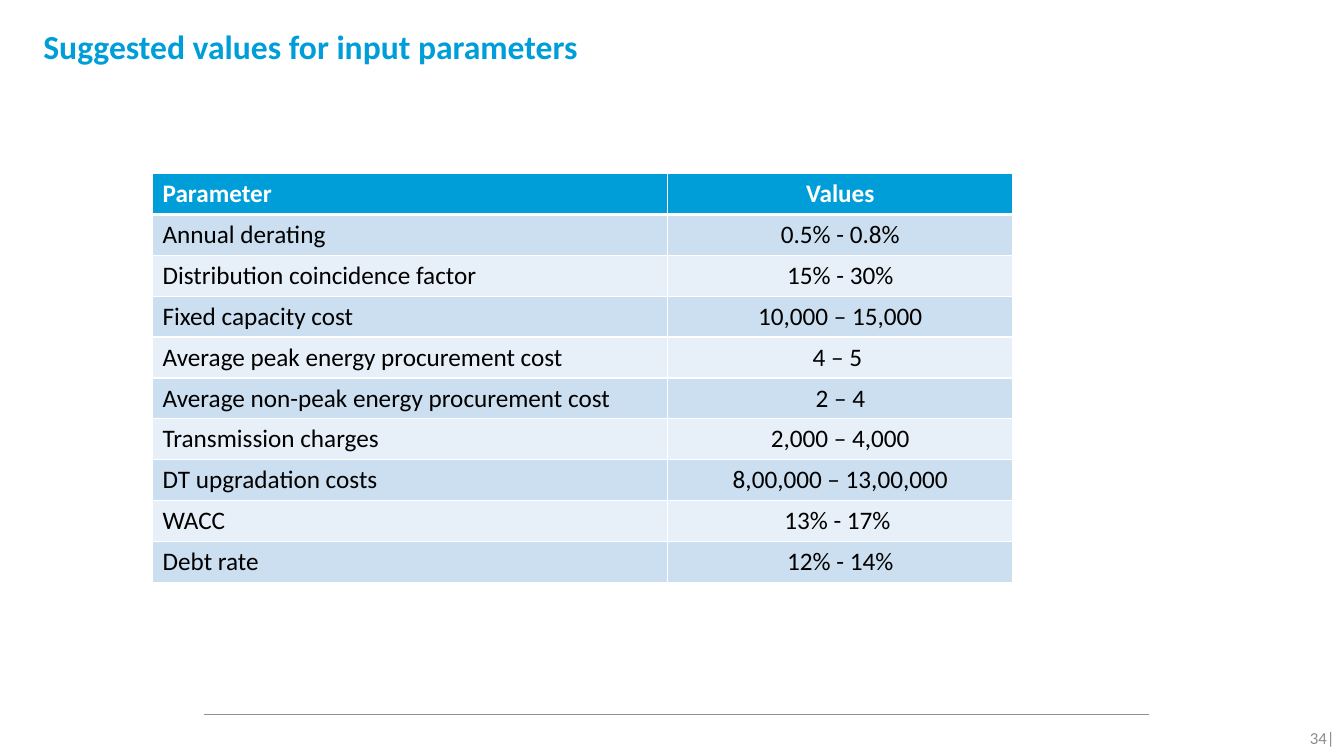
from lxml import etree
from pptx import Presentation
from pptx import util as u
from pptx.dml import color
from pptx.enum import shapes, text
from pptx.oxml import ns

HUES = {
    "blue": "009ED8",
    "band": "CCDFF0",
    "pale": "E7F0F8",
    "rule": "8F9194",
    "gray": "8C8C8C",
    "white": "FFFFFF",
    "black": "000000",
}

ROWS = [
    ("Parameter", "Values"),
    ("Annual derating", "0.5% - 0.8%"),
    ("Distribution coincidence factor", "15% - 30%"),
    ("Fixed capacity cost", "10,000 – 15,000"),
    ("Average peak energy procurement cost", "4 – 5 "),
    ("Average non-peak energy procurement cost", "2 – 4"),
    ("Transmission charges", "2,000 – 4,000"),
    ("DT upgradation costs", "8,00,000 – 13,00,000"),
    ("WACC", "13% - 17% "),
    ("Debt rate", "12% - 14%"),
]


class Deck:
    font = "Calibri"

    def __init__(self, wide, high):
        self.prs = Presentation()
        self.prs.slide_width, self.prs.slide_height = u.Pt(wide), u.Pt(high)
        self.slide = self.prs.slides.add_slide(self.prs.slide_layouts[6])

    def hue(self, name):
        return color.RGBColor.from_string(HUES[name])

    def style(self, frame, words, size, hue, bold=False, align="LEFT"):
        frame.text = words
        para = frame.paragraphs[0]
        para.alignment = text.PP_ALIGN[align]
        for run in para.runs:
            font = run.font
            font.name, font.size, font.bold = self.font, u.Pt(size), bold
            font.color.rgb = self.hue(hue)

    def label(self, words, box, size, hue, bold=False, align="LEFT",
              anchor="TOP", side=7.2):
        frame = self.slide.shapes.add_textbox(*map(u.Pt, box)).text_frame
        frame.word_wrap = True
        frame.vertical_anchor = text.MSO_ANCHOR[anchor]
        frame.margin_left = frame.margin_right = u.Pt(side)
        self.style(frame, words, size, hue, bold, align)

    def rule(self, left, right, y, hue, width):
        line = self.slide.shapes.add_connector(
            shapes.MSO_CONNECTOR.STRAIGHT, *map(u.Pt, (left, y, right, y)))
        line.line.color.rgb = self.hue(hue)
        line.line.width = u.Pt(width)
        etree.SubElement(line._element.spPr, ns.qn("a:effectLst"))

    def edge(self, cell, side, width):
        props = cell._tc.get_or_add_tcPr()
        line = etree.SubElement(props, ns.qn("a:ln" + side), w=str(u.Pt(width)))
        fill = etree.SubElement(line, ns.qn("a:solidFill"))
        etree.SubElement(fill, ns.qn("a:srgbClr"), val=HUES["white"])

    def table(self, rows, left, top, cols, high, size):
        box = (left, top, sum(cols), high * len(rows))
        grid = self.slide.shapes.add_table(
            len(rows), len(cols), *map(u.Pt, box)).table
        grid.horz_banding = False
        for col, wide in zip(grid.columns, cols):
            col.width = u.Pt(wide)
        for r, row in enumerate(rows):
            grid.rows[r].height = u.Pt(high)
            head = r == 0
            fill = "blue" if head else "band" if r % 2 else "pale"
            for c, words in enumerate(row):
                cell = grid.cell(r, c)
                for side in "LRTB":
                    thick = (head and side == "B") or (r == 1 and side == "T")
                    self.edge(cell, side, 3 if thick else 1)
                cell.fill.solid()
                cell.fill.fore_color.rgb = self.hue(fill)
                self.style(cell.text_frame, words, size,
                           "white" if head else "black", head,
                           "CENTER" if c else "LEFT")


def main():
    deck = Deck(960, 540)
    deck.rule(145.5, 820.5, 510.5, "rule", 0.75)
    deck.label("34|", (899.5, 512.5, 61, 29), 12, "gray",
               align="RIGHT", anchor="MIDDLE")
    deck.label("Suggested values for input parameters",
               (31, 15, 888.5, 62.5), 24, "blue", bold=True, side=0)
    deck.table(ROWS, 109, 124, (368, 246.5), 29.2, 18)
    deck.prs.save("out.pptx")


if __name__ == "__main__":
    main()
